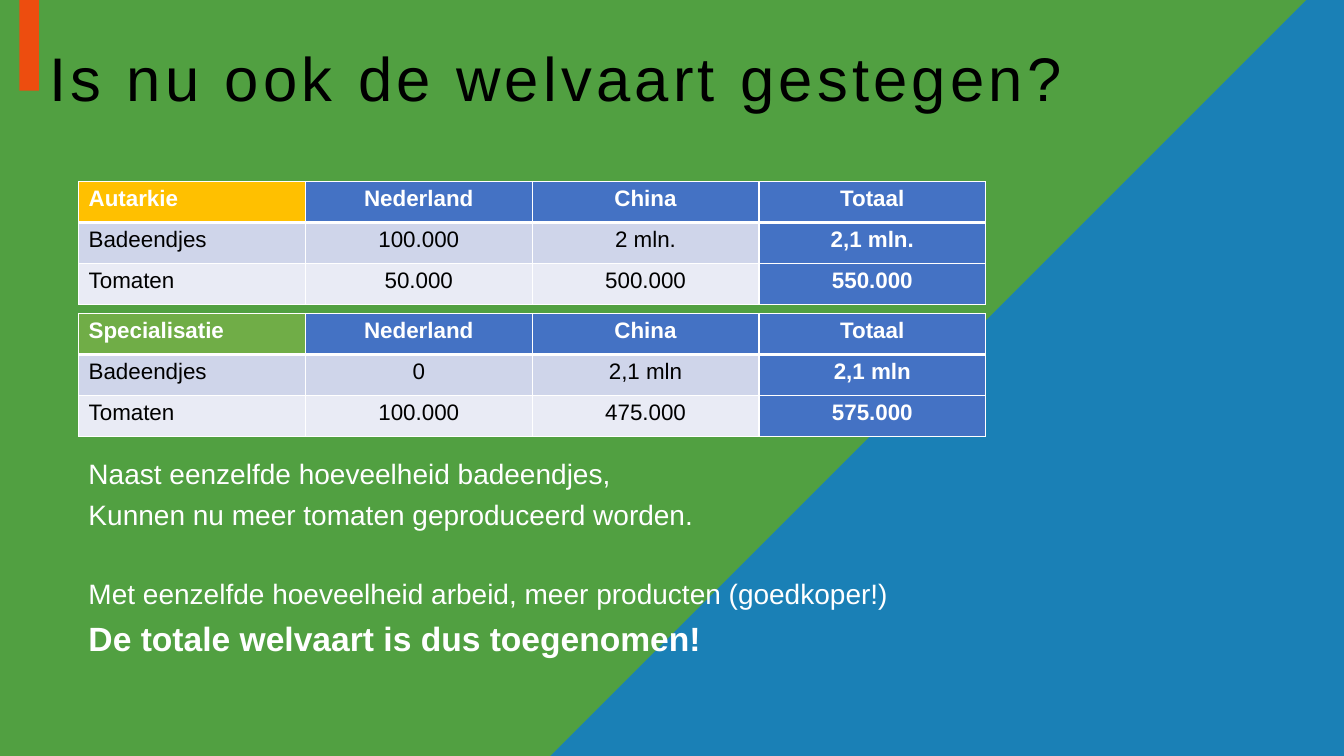
from dataclasses import dataclass
from lxml import etree
from pptx import Presentation, util as u
from pptx.dml.color import RGBColor
from pptx.enum import shapes, text
from pptx.oxml.ns import qn


@dataclass(frozen=True)
class Theme:
    font: str = "Arial"
    green: str = "51A041"
    blue: str = "1A80B6"
    red: str = "ED4D0F"
    gold: str = "FFC000"
    leaf: str = "70AD47"
    head: str = "4472C4"
    bands: tuple = ("CFD5EA", "E9EBF5")
    white: str = "FFFFFF"
    black: str = "000000"
    title: int = 44
    big: int = 24
    body: int = 20
    cell: int = 16


class Deck:
    """Draws on one slide, with lengths in percent of its width and height."""

    def __init__(self, theme):
        self.theme = theme
        self.prs = Presentation()
        self.prs.slide_width = u.Inches(13.333)
        self.prs.slide_height = u.Inches(7.5)
        self.slide = self.prs.slides.add_slide(self.prs.slide_layouts[6])

    def scale(self, *spans):
        sides = (self.prs.slide_width, self.prs.slide_height)
        return [round(sides[i % 2] * s / 100) for i, s in enumerate(spans)]

    def paint(self, shape, color):
        shape.shadow.inherit = False
        shape.fill.solid()
        shape.fill.fore_color.rgb = RGBColor.from_string(color)
        shape.line.fill.background()

    def rect(self, box, color):
        kind = shapes.MSO_SHAPE.RECTANGLE
        self.paint(self.slide.shapes.add_shape(kind, *self.scale(*box)), color)

    def shape(self, points, color):
        first, *rest = [self.scale(*p) for p in points]
        form = self.slide.shapes.build_freeform(*first)
        form.add_line_segments(rest)
        self.paint(form.convert_to_shape(), color)

    def run(self, para, words, size, color, bold=False):
        run = para.add_run()
        run.text = words
        run.font.name = self.theme.font
        run.font.size = u.Pt(size)
        run.font.bold = bold
        run.font.color.rgb = RGBColor.from_string(color)
        return run

    def frame(self, box):
        frame = self.slide.shapes.add_textbox(*self.scale(*box)).text_frame
        frame.word_wrap = True
        return frame

    def title(self, box, words):
        frame = self.frame(box)
        frame.margin_top = u.Inches(0.09)
        para = frame.paragraphs[0]
        para.line_spacing = 0.9
        run = self.run(para, words, self.theme.title, self.theme.black)
        run.font._element.set("spc", "300")

    def body(self, box, lines):
        frame = self.frame(box)
        for i, (words, size, bold, gap) in enumerate(lines):
            para = frame.add_paragraph() if i else frame.paragraphs[0]
            para.space_before = u.Pt(gap)
            self.run(para, words, size, self.theme.white, bold)

    def edge(self, cell, widths):
        props = cell._tc.get_or_add_tcPr()
        for i, (side, width) in enumerate(zip("LRTB", widths)):
            line = etree.Element(qn(f"a:ln{side}"), w=str(u.Pt(width)))
            fill = etree.SubElement(line, qn("a:solidFill"))
            etree.SubElement(fill, qn("a:srgbClr"), val=self.theme.white)
            props.insert(i, line)

    def table(self, box, rows, accent):
        look = self.theme
        size = len(rows), len(rows[0])
        grid = self.slide.shapes.add_table(*size, *self.scale(*box)).table
        for r, row in enumerate(rows):
            for c, words in enumerate(row):
                cell = grid.cell(r, c)
                strong = r == 0 or c == size[1] - 1
                fill = look.head if strong else look.bands[(r - 1) % 2]
                if r == c == 0:
                    fill = accent
                cell.fill.solid()
                cell.fill.fore_color.rgb = RGBColor.from_string(fill)
                self.edge(cell, (1, 1, 3 if r == 1 else 1, 1 if r else 3))
                para = cell.text_frame.paragraphs[0]
                if c:
                    para.alignment = text.PP_ALIGN.CENTER
                color = look.white if strong else look.black
                self.run(para, words, look.cell, color, strong)


def main():
    look = Theme()
    deck = Deck(look)
    deck.rect((0, 0, 100, 100), look.green)
    deck.shape([(97.2, 0), (100, 0), (100, 100), (40.95, 100)], look.blue)
    deck.rect((1.45, 0, 1.45, 12), look.red)
    deck.body((5.85, 59.73, 89.1, 39.6), [
        ("Naast eenzelfde hoeveelheid badeendjes,", look.body, False, 5),
        ("Kunnen nu meer tomaten geproduceerd worden.", look.body, False, 5),
        ("Met eenzelfde hoeveelheid arbeid, meer producten (goedkoper!)",
         look.body, False, 33),
        ("De totale welvaart is dus toegenomen!", look.big, True, 5),
    ])
    head = ["Nederland", "China", "Totaal"]
    tables = [
        (look.gold, [["Autarkie", *head],
                     ["Badeendjes", "100.000", "2 mln.", "2,1 mln."],
                     ["Tomaten", "50.000", "500.000", "550.000"]]),
        (look.leaf, [["Specialisatie", *head],
                     ["Badeendjes", "0", "2,1 mln", "2,1 mln"],
                     ["Tomaten", "100.000", "475.000", "575.000"]]),
    ]
    for i, (accent, rows) in enumerate(tables):
        deck.table((5.85, 24 + 17.47 * i, 67.5, 16.27), rows, accent)
    deck.title((2.93, 5.2, 94.58, 19.33), "Is nu ook de welvaart gestegen?")
    deck.prs.save("out.pptx")


if __name__ == "__main__":
    main()
